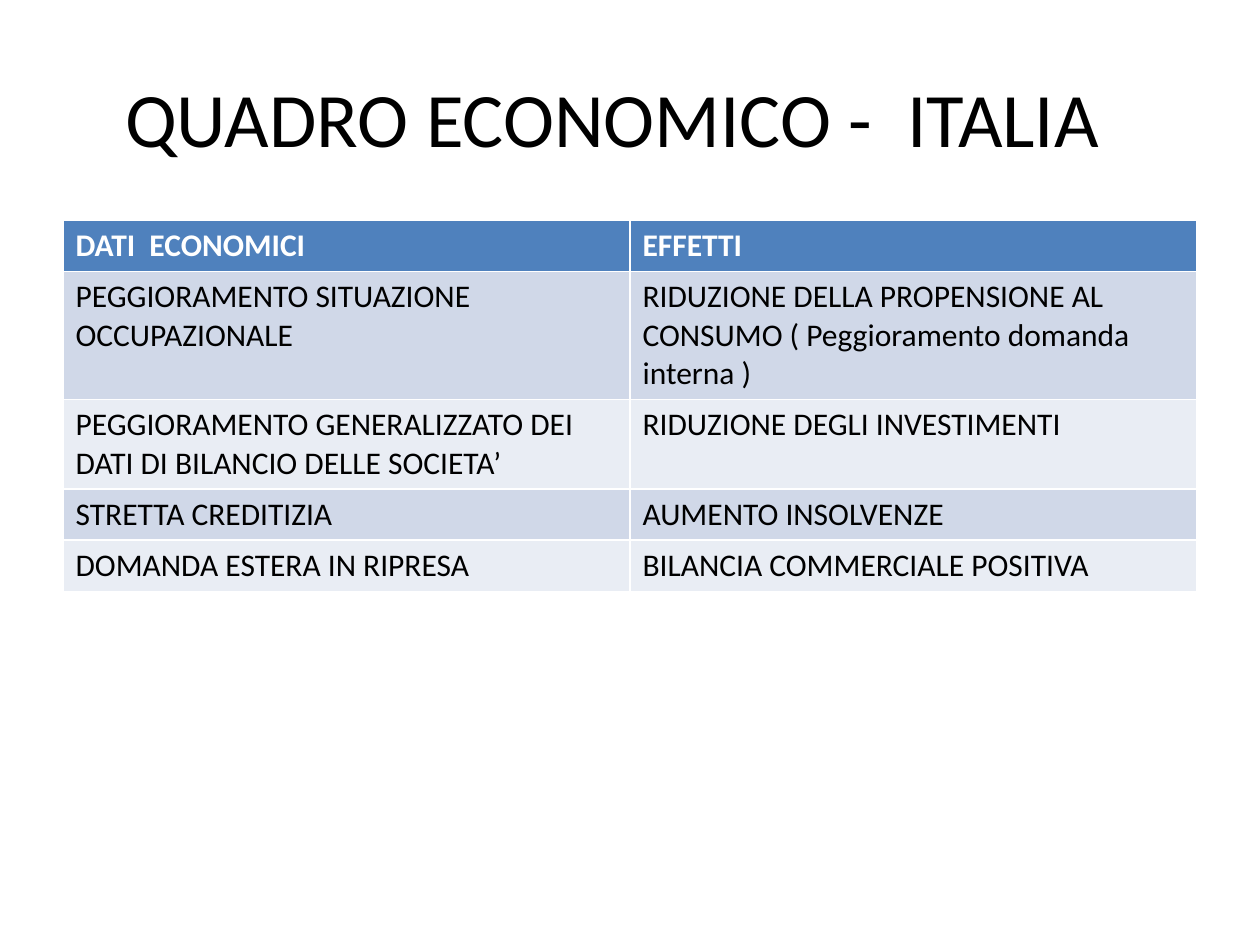
from pptx import Presentation
from pptx.dml.color import RGBColor
from pptx.enum.text import MSO_ANCHOR, PP_ALIGN
from pptx.util import Pt

MIDDLE = MSO_ANCHOR.MIDDLE
CENTER = PP_ALIGN.CENTER


def rgb(color):
    return RGBColor.from_string(color)


def format_text(p, size, color, bold=False):
    for r in p.runs:
        r.font.name = "Calibri"
        r.font.size = Pt(size)
        r.font.bold = bold
        r.font.color.rgb = rgb(color)


prs = Presentation()
prs.slide_width, prs.slide_height = Pt(720), Pt(540)
s = prs.slides.add_slide(prs.slide_layouts[5])

title = s.shapes.title
title.left, title.top, title.width, title.height = Pt(36), Pt(21.6), Pt(648), Pt(90)
tf = title.text_frame
tf.text = "QUADRO ECONOMICO -  ITALIA  "
tf.vertical_anchor = MIDDLE
tf.paragraphs[0].alignment = CENTER
format_text(tf.paragraphs[0], 44, "000000")

rows = [
    ("DATI  ECONOMICI", "EFFETTI"),
    ("PEGGIORAMENTO SITUAZIONE OCCUPAZIONALE",
     "RIDUZIONE DELLA PROPENSIONE AL CONSUMO ( Peggioramento domanda interna )"),
    ("PEGGIORAMENTO GENERALIZZATO DEI DATI DI BILANCIO DELLE SOCIETA’",
     "RIDUZIONE DEGLI INVESTIMENTI"),
    ("STRETTA CREDITIZIA", "AUMENTO INSOLVENZE"),
    ("DOMANDA ESTERA IN RIPRESA", "BILANCIA COMMERCIALE POSITIVA"),
]
row_height = 29.2
table = s.shapes.add_table(len(rows), 2, Pt(36), Pt(126), Pt(648), Pt(row_height * len(rows))).table
for column in table.columns:
    column.width = Pt(324)

for i, texts in enumerate(rows):
    table.rows[i].height = Pt(row_height)
    header = i == 0
    fill = "4F81BD" if header else ("E9EDF4", "D0D8E8")[i % 2]
    for j, text in enumerate(texts):
        cell = table.cell(i, j)
        cell.fill.solid()
        cell.fill.fore_color.rgb = rgb(fill)
        cell.text_frame.text = text
        format_text(cell.text_frame.paragraphs[0], 18, "FFFFFF" if header else "000000", header)

prs.save("out.pptx")
